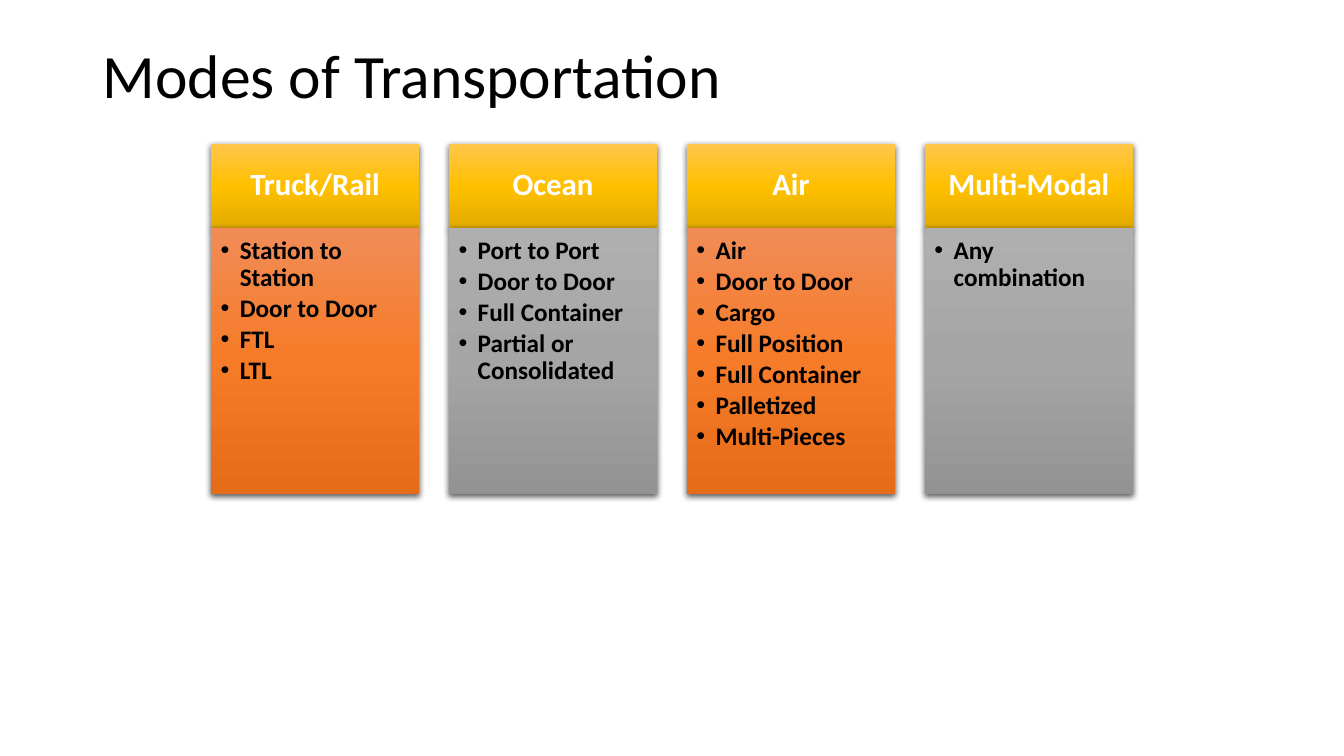
from copy import deepcopy

from lxml.etree import SubElement
from pptx import Presentation
from pptx.dml.color import RGBColor
from pptx.enum.shapes import MSO_SHAPE
from pptx.enum.text import MSO_ANCHOR, MSO_AUTO_SIZE, PP_ALIGN
from pptx.oxml.ns import qn
from pptx.util import Inches, Pt

GOLD = ("FFC64B", "FFC000", "E3AB00")
ORANGE = ("F18C57", "F67B28", "E56C19")
GRAY = ("AFAFAF", "A5A5A5", "939393")

MODES = [
    ("Truck/Rail", ["Station to Station", "Door to Door", "FTL", "LTL"]),
    ("Ocean", ["Port to Port", "Door to Door", "Full Container",
               "Partial or Consolidated"]),
    ("Air", ["Air", "Door to Door", "Cargo", "Full Position",
             "Full Container", "Palletized", "Multi-Pieces"]),
    ("Multi-Modal", ["Any combination"]),
]


def color(hex_string):
    return RGBColor.from_string(hex_string)


def add_bullet(paragraph):
    properties = paragraph._p.get_or_add_pPr()
    properties.set("marL", str(Inches(0.19)))
    properties.set("indent", str(-Inches(0.19)))
    SubElement(properties, qn("a:buFont"), typeface="Arial")
    SubElement(properties, qn("a:buChar"), char="•")


def write_text(frame, lines, size, font="Calibri", fill="000000", bold=False,
               align=PP_ALIGN.LEFT, anchor=MSO_ANCHOR.TOP, bullet=False,
               space_after=0, insets=(0.1, 0.05, 0.1, 0.05)):
    frame.word_wrap = True
    frame.auto_size = MSO_AUTO_SIZE.NONE
    frame.vertical_anchor = anchor
    (frame.margin_left, frame.margin_top,
     frame.margin_right, frame.margin_bottom) = map(Inches, insets)
    for index, line in enumerate(lines):
        paragraph = frame.add_paragraph() if index else frame.paragraphs[0]
        if bullet:
            add_bullet(paragraph)
        paragraph.alignment = align
        paragraph.line_spacing = 0.9
        paragraph.space_after = Pt(space_after)
        run = paragraph.add_run()
        run.text = line
        run.font.name = font
        run.font.size = Pt(size)
        run.font.bold = bold
        run.font.color.rgb = color(fill)


class SlideBuilder:
    def __init__(self, presentation):
        self.slide = presentation.slides.add_slide(
            presentation.slide_layouts[5])

    def title(self, text, left, top, width, height):
        title = self.slide.shapes.title
        title.left, title.top = Inches(left), Inches(top)
        title.width, title.height = Inches(width), Inches(height)
        write_text(title.text_frame, [text], 44, anchor=MSO_ANCHOR.MIDDLE)

    def panel(self, left, top, width, height, gradient):
        shape = self.slide.shapes.add_shape(
            MSO_SHAPE.RECTANGLE, Inches(left), Inches(top),
            Inches(width), Inches(height))
        shape.line.fill.background()
        self.fill_gradient(shape, gradient)
        self.add_shadow(shape)
        return shape

    def fill_gradient(self, shape, gradient):
        shape.fill.gradient()
        shape.fill.gradient_angle = 270
        stop_list = shape._element.spPr.find(".//" + qn("a:gsLst"))
        stop_list.append(deepcopy(stop_list[0]))
        for index, stop in enumerate(shape.fill.gradient_stops):
            stop.position = index / 2
            stop.color.rgb = color(gradient[index])

    def add_shadow(self, shape):
        shape.shadow.inherit = False
        effects = shape._element.spPr.find(qn("a:effectLst"))
        shadow = SubElement(
            effects, qn("a:outerShdw"), blurRad=str(Pt(4.5)),
            dist=str(Pt(1.5)), dir="5400000", algn="ctr", rotWithShape="0")
        tint = SubElement(shadow, qn("a:srgbClr"), val="000000")
        SubElement(tint, qn("a:alpha"), val="63000")

    def mode_column(self, left, heading, items, gradient):
        header = self.panel(left, 1.43, 2.07, 0.83, GOLD)
        write_text(header.text_frame, [heading], 22, fill="FFFFFF", bold=True,
                   align=PP_ALIGN.CENTER, anchor=MSO_ANCHOR.MIDDLE,
                   insets=(0.17, 0.1, 0.17, 0.1))
        body = self.panel(left, 2.26, 2.07, 2.64, gradient)
        write_text(body.text_frame, items, 18, bold=True, bullet=True,
                   space_after=2.7, insets=(0.1, 0.1, 0.14, 0.16))


def main():
    presentation = Presentation()
    presentation.slide_width = Inches(13.33)
    presentation.slide_height = Inches(7.5)
    builder = SlideBuilder(presentation)
    for index, (heading, items) in enumerate(MODES):
        gradient = GRAY if index % 2 else ORANGE
        builder.mode_column(2.09 + 2.36 * index, heading, items, gradient)
    builder.title("Modes of Transportation", 0.92, 0.05, 11.5, 1.45)
    presentation.save("out.pptx")


if __name__ == "__main__":
    main()
